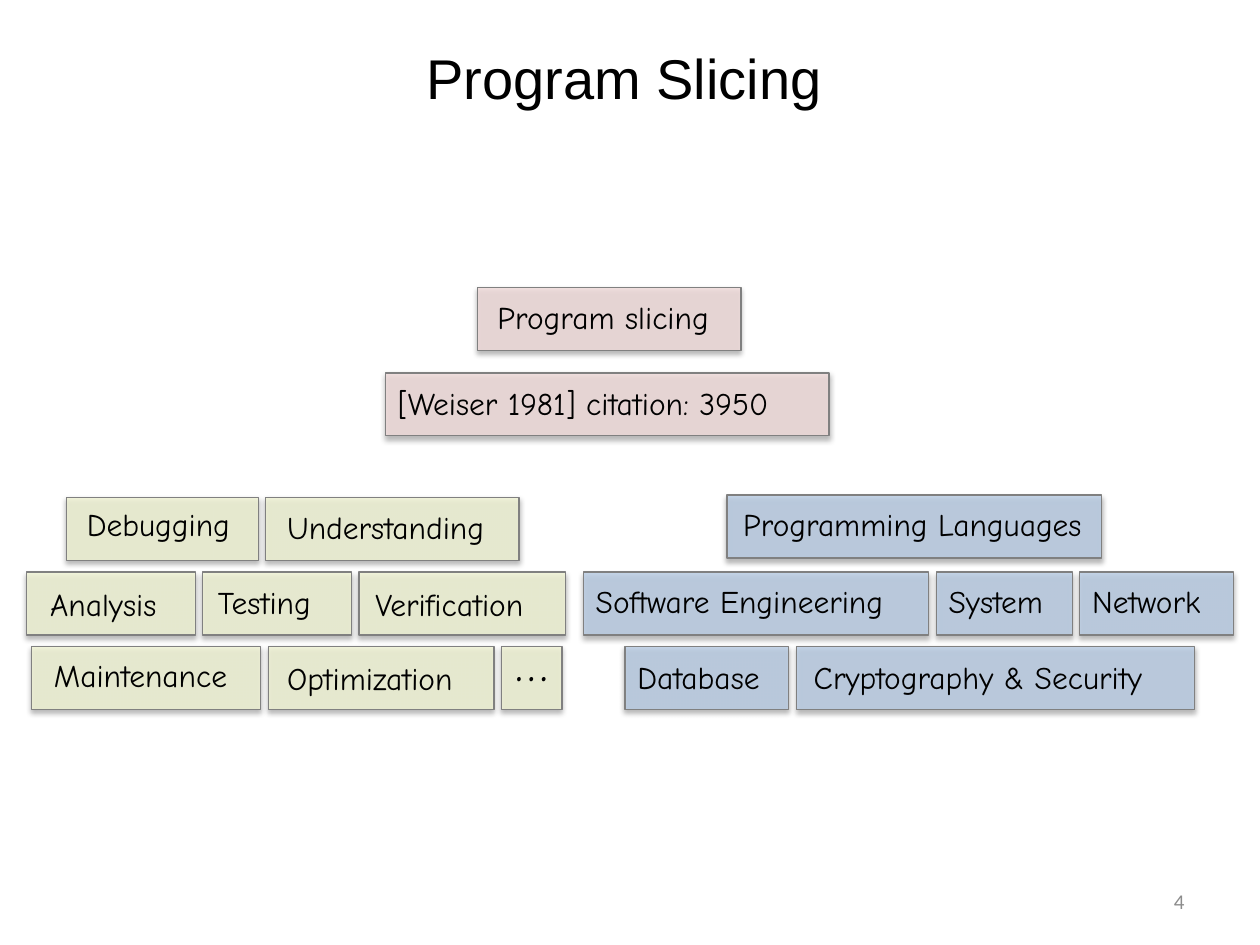
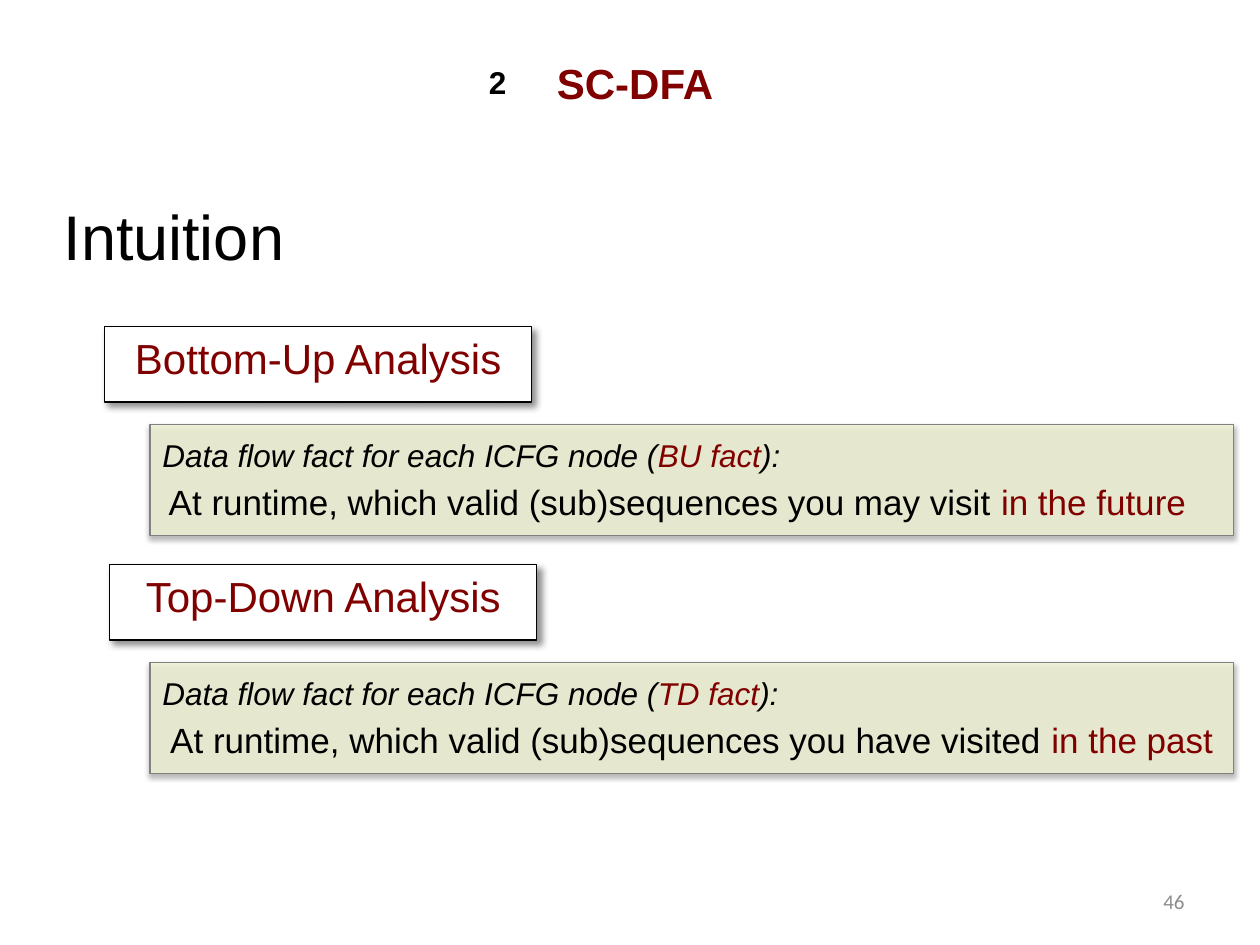
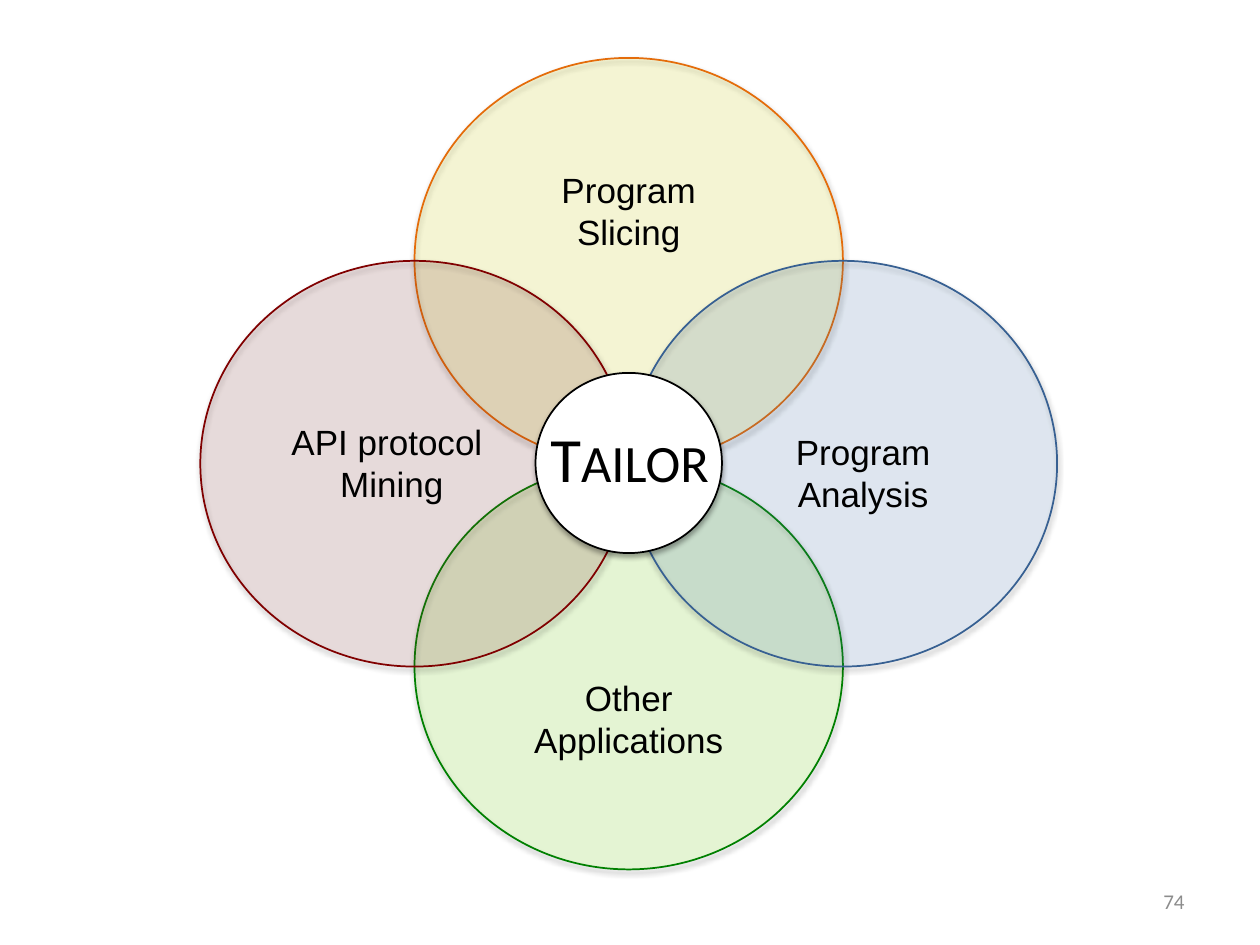
from dataclasses import dataclass
from typing import Any, NamedTuple

from lxml import etree
from pptx import Presentation
from pptx.dml.color import RGBColor
from pptx.enum.shapes import MSO_SHAPE
from pptx.enum.text import MSO_ANCHOR, MSO_AUTO_SIZE, PP_ALIGN
from pptx.oxml.ns import qn
from pptx.util import Inches, Pt

RECT, OVAL = MSO_SHAPE.RECTANGLE, MSO_SHAPE.OVAL
TOP, MIDDLE = MSO_ANCHOR.TOP, MSO_ANCHOR.MIDDLE
LEFT, CENTER, RIGHT = PP_ALIGN.LEFT, PP_ALIGN.CENTER, PP_ALIGN.RIGHT
TITLE_ONLY, BLANK = 5, 6

BLACK, WHITE, MAROON = "000000", "FFFFFF", "800000"
GREY, PAGE_GREY = "808080", "8C8C8C"
CREAM, SKY, ROSE = "F2F5D5", "B9CDE5", "F2DCDB"
BODY_FONT, TAG_FONT, PAGE_FONT = "Arial", "Comic Neue", "Calibri"


class Box(NamedTuple):
    left: float
    top: float
    width: float
    height: float


class Shadow(NamedTuple):
    opacity: int
    blur: float
    distance: float
    angle: int


@dataclass(frozen=True)
class Run:
    text: str
    size: float = 18
    color: str = BLACK
    font: str = BODY_FONT
    bold: bool = False
    italic: bool = False


@dataclass(frozen=True)
class Para:
    runs: tuple[Run, ...]
    align: Any = LEFT
    spaced: bool = False
    hanging: float = 0


@dataclass(frozen=True)
class Look:
    fill: str
    line: str
    opacity: int = 100
    line_width: float = 0.75
    shadow: Shadow = Shadow(35, 3.1, 1.8, 90)


@dataclass(frozen=True)
class Tag:
    text: str
    width: float
    text_width: float
    dx: float = 0
    dy: float = 0.03
    size: float = 18


@dataclass(frozen=True)
class TagRow:
    left: float
    top: float
    color: str
    tags: tuple[Tag, ...]


@dataclass(frozen=True)
class Direction:
    name: str
    name_left: float
    top: float
    fact: str
    question: str
    when: str
    fact_width: float


@dataclass(frozen=True)
class Petal:
    lines: tuple[str, str]
    column: int
    row: int
    fill: str
    line: str
    caption_left: float
    caption_top: float


TAG_GAP, TAG_HEIGHT = 0.06, 0.5
FIRST_ROW, ROW_STEP = 3.95, 0.59
ROW_TOPS = [FIRST_ROW + ROW_STEP * i for i in range(3)]

TAG_ROWS = (
    TagRow(0.53, ROW_TOPS[0], CREAM, (
        Tag("Debugging", 1.52, 1.41, 0.06, 0.01),
        Tag("Understanding", 2.01, 1.92, 0.07))),
    TagRow(0.21, ROW_TOPS[1], CREAM, (
        Tag("Analysis", 1.34, 1.17, 0.09, 0.05),
        Tag("Testing", 1.18, 1.09, 0.02, 0.04),
        Tag("Verification", 1.64, 1.61, 0.03, 0.05))),
    TagRow(0.25, ROW_TOPS[2], CREAM, (
        Tag("Maintenance", 1.82, 1.68, 0.08),
        Tag("Optimization", 1.79, 1.71, 0.05, 0.05),
        Tag("…", 0.48, 0.47, 0.01, -0.16, 28))),
    TagRow(5.77, ROW_TOPS[0] - 0.02, SKY, (
        Tag("Programming Languages", 2.97, 2.97, 0.03),)),
    TagRow(4.63, ROW_TOPS[1], SKY, (
        Tag("Software Engineering", 2.74, 2.74),
        Tag("System", 1.08, 1.08),
        Tag("Network", 1.22, 1.22))),
    TagRow(4.96, ROW_TOPS[2], SKY, (
        Tag("Database", 1.3, 1.3, 0, 0.04),
        Tag("Cryptography & Security", 3.16, 3.12, 0.04, 0.04))),
    TagRow(3.79, 2.28, ROSE, (
        Tag("Program slicing", 2.09, 2.07, 0.06, 0.04),)),
    TagRow(3.06, 2.96, ROSE, (
        Tag("[Weiser 1981] citation: 3950", 3.52, 3.6, 0, 0.04),)),
)

DIRECTIONS = (
    Direction("Bottom-Up Analysis", 0.83, 2.59, "BU fact",
              "At runtime, which valid (sub)sequences you may visit ",
              "in the future ", 8.45),
    Direction("Top-Down Analysis", 0.87, 4.48, "TD fact",
              "At runtime, which valid (sub)sequences you have visited ",
              "in the past", 8.6),
)

PETALS = (
    Petal(("Other", "Applications"), 0, 1, "80FF00", "008000", 3.53, 5.31),
    Petal(("Program", "Slicing"), 0, -1, "FFFF00", "E46C0A", 3.53, 1.28),
    Petal(("API protocol ", "Mining"), -1, 0, "953735", MAROON, 1.65, 3.28),
    Petal(("Program", "Analysis"), 1, 0, "558ED5", "376092", 5.39, 3.36),
)


def rgb(color: str) -> RGBColor:
    return RGBColor.from_string(color)


def apply_formats(target: Any, formats: dict[str, Any]) -> None:
    for attribute, value in formats.items():
        setattr(target, attribute, value)


def emu(box: Box) -> list[int]:
    return [Inches(length) for length in box]


def write(frame: Any, paras: tuple[Para, ...], anchor: Any = TOP,
          wrap: bool = True) -> None:
    apply_formats(frame, {"word_wrap": wrap, "vertical_anchor": anchor,
                          "auto_size": MSO_AUTO_SIZE.NONE})
    for index, para in enumerate(paras):
        paragraph = frame.add_paragraph() if index else frame.paragraphs[0]
        paragraph.alignment = para.align
        if para.spaced:
            paragraph.space_before = Pt(0.2 * max(r.size for r in para.runs))
        if para.hanging:
            properties = paragraph._p.get_or_add_pPr()
            properties.set("marL", str(Inches(para.hanging)))
            properties.set("indent", str(-Inches(para.hanging)))
        for piece in para.runs:
            run = paragraph.add_run()
            run.text = piece.text
            apply_formats(run.font, {"size": Pt(piece.size), "name": piece.font,
                                     "bold": piece.bold, "italic": piece.italic})
            run.font.color.rgb = rgb(piece.color)


def add_text(slide: Any, box: Box, *paras: Para, anchor: Any = TOP,
             wrap: bool = True) -> None:
    write(slide.shapes.add_textbox(*emu(box)).text_frame, paras, anchor, wrap)


def set_title(slide: Any, box: Box, para: Para, anchor: Any) -> None:
    title = slide.shapes.title
    apply_formats(title, dict(zip(("left", "top", "width", "height"), emu(box))))
    write(title.text_frame, (para,), anchor)


def add_alpha(color_element: Any, percent: int) -> None:
    etree.SubElement(color_element, qn("a:alpha")).set("val", str(percent * 1000))


def add_panel(slide: Any, preset: Any, box: Box, look: Look) -> Any:
    panel = slide.shapes.add_shape(preset, *emu(box))
    panel.fill.solid()
    panel.fill.fore_color.rgb = rgb(look.fill)
    panel.line.color.rgb = rgb(look.line)
    panel.line.width = Pt(look.line_width)
    panel.shadow.inherit = False
    properties = panel._element.spPr
    if look.opacity < 100:
        add_alpha(properties.find(qn("a:solidFill"))[0], look.opacity)
    outer = etree.SubElement(properties.find(qn("a:effectLst")), qn("a:outerShdw"))
    shadow = look.shadow
    for key, value in {"blurRad": Pt(shadow.blur), "dist": Pt(shadow.distance),
                       "dir": shadow.angle * 60000, "rotWithShape": 0}.items():
        outer.set(key, str(value))
    shade = etree.SubElement(outer, qn("a:srgbClr"))
    shade.set("val", BLACK)
    add_alpha(shade, shadow.opacity)
    return panel


def add_page_number(slide: Any, number: int) -> None:
    add_text(slide, Box(7.17, 6.95, 2.33, 0.4),
             Para((Run(str(number), 12, PAGE_GREY, PAGE_FONT),), RIGHT),
             anchor=MIDDLE)


def add_tag_row(slide: Any, row: TagRow) -> None:
    left = row.left
    for tag in row.tags:
        add_panel(slide, RECT, Box(left, row.top, tag.width, TAG_HEIGHT),
                  Look(row.color, GREY, 79))
        add_text(slide, Box(left + tag.dx, row.top + tag.dy, tag.text_width, 0.4),
                 Para((Run(tag.text, tag.size, font=TAG_FONT),)), wrap=False)
        left += tag.width + TAG_GAP


def build_slicing(slide: Any) -> None:
    set_title(slide, Box(0.83, 0, 8.25, 1.22),
              Para((Run("Program Slicing", 32),), CENTER), MIDDLE)
    for row in TAG_ROWS:
        add_tag_row(slide, row)


def add_direction(slide: Any, item: Direction) -> None:
    heading = add_panel(slide, RECT, Box(item.name_left, item.top, 3.39, 0.6),
                        Look(WHITE, BLACK, shadow=Shadow(43, 4, 3, 45)))
    write(heading.text_frame,
          (Para((Run(item.name, 24, MAROON),), CENTER, True, 0.38),))
    fact_top = item.top + 0.78
    add_panel(slide, RECT, Box(1.19, fact_top, 8.6, 0.88), Look(CREAM, GREY, 79))
    add_text(slide, Box(1.19, fact_top + 0.04, item.fact_width, 1.08),
             Para((Run("Data flow fact for each ICFG node (", italic=True),
                   Run(item.fact, color=MAROON, italic=True),
                   Run("):", italic=True)), spaced=True),
             Para((Run(item.question, 20), Run(item.when, 20, MAROON)),
                  CENTER, True))


def build_intuition(slide: Any) -> None:
    set_title(slide, Box(4.32, 0.41, 1.74, 0.5),
              Para((Run("SC-DFA", 24, MAROON, bold=True),)), TOP)
    add_text(slide, Box(3.77, 0.45, 0.36, 0.38),
             Para((Run("2", bold=True),), CENTER, True))
    for item in DIRECTIONS:
        add_direction(slide, item)
    add_text(slide, Box(0.22, 1.52, 2.32, 0.45),
             Para((Run("Intuition", 36),), CENTER, True))


def build_petals(slide: Any) -> None:
    width, height = 3.4, 3.22
    for petal in PETALS:
        add_panel(slide, OVAL,
                  Box(3.29 + petal.column * width / 2,
                      2.07 + petal.row * height / 2, width, height),
                  Look(petal.fill, petal.line, 13, 1))
    add_panel(slide, OVAL, Box(4.25, 2.96, 1.48, 1.43),
              Look(WHITE, BLACK, line_width=1))
    for petal in PETALS:
        add_text(slide, Box(petal.caption_left, petal.caption_top, 2.92, 0.78),
                 *(Para((Run(line, 20),), CENTER) for line in petal.lines),
                 anchor=MIDDLE)
    add_text(slide, Box(4.27, 3.28, 1.62, 0.71),
             Para((Run("T", 36, font=PAGE_FONT), Run("AILOR", 30, font=PAGE_FONT))))


def main() -> None:
    deck = Presentation()
    deck.slide_width, deck.slide_height = Inches(10), Inches(7.5)
    for build, layout, number in ((build_slicing, TITLE_ONLY, 4),
                                  (build_intuition, TITLE_ONLY, 46),
                                  (build_petals, BLANK, 74)):
        slide = deck.slides.add_slide(deck.slide_layouts[layout])
        build(slide)
        add_page_number(slide, number)
    deck.save("out.pptx")


if __name__ == "__main__":
    main()
